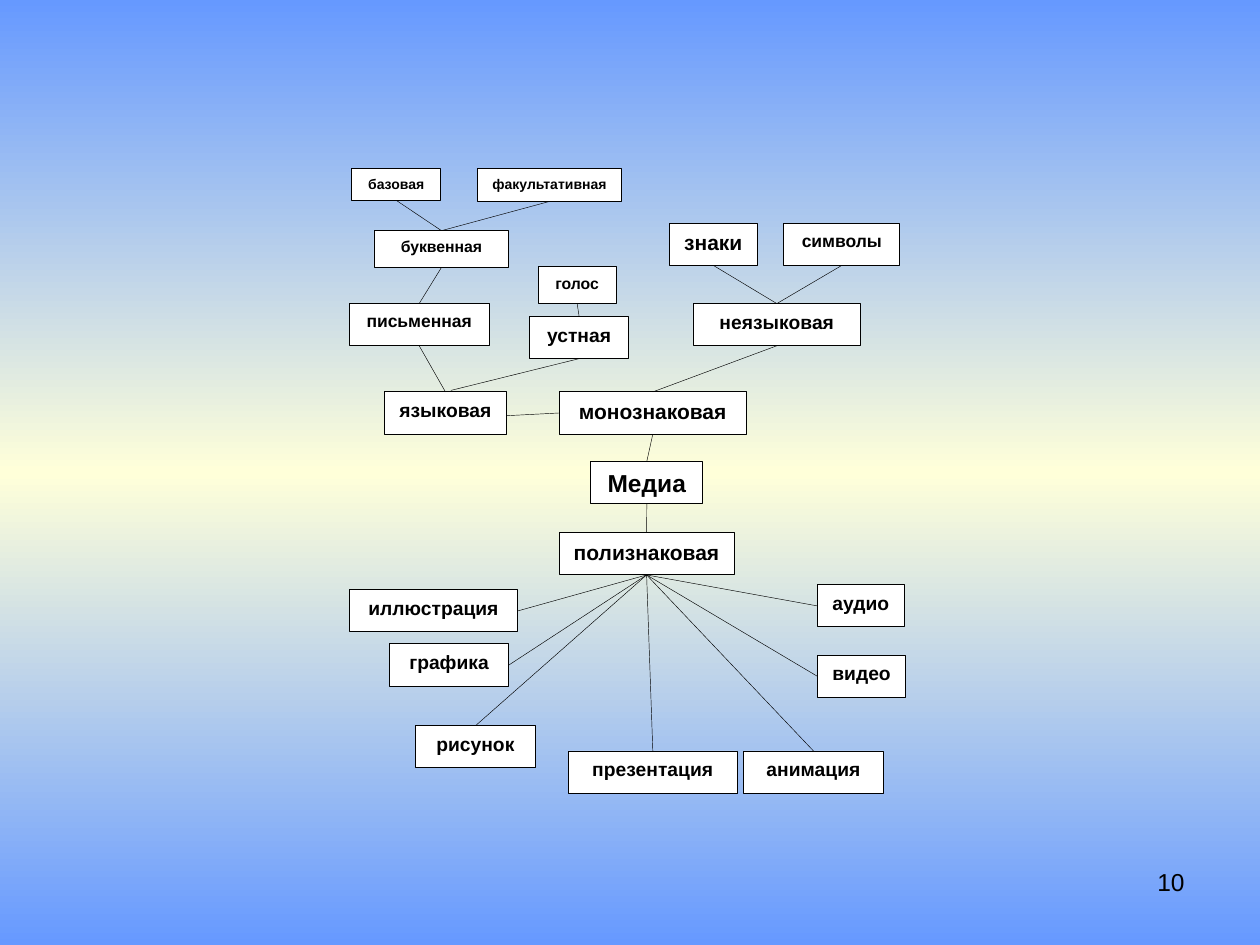
from copy import deepcopy
from typing import NamedTuple, Optional

from pptx import Presentation
from pptx import util as u
from pptx.dml.color import RGBColor
from pptx.enum import shapes, text
from pptx.oxml import ns, xmlchemy

BLACK, WHITE = "000000", "FFFFFF"
BACKGROUND_STOPS = [(0, "6699FF"), (0.5, "FFFFD9"), (1, "6699FF")]
TOP, LEFT, BOTTOM, RIGHT = range(4)


class Node(NamedTuple):
    label: str
    left: float
    top: float
    width: float
    size: int
    height: float = 0.85


class Link(NamedTuple):
    """A line between two boxes; free_end replaces the joint at the target."""
    source: str
    source_side: int
    target: str = ""
    target_side: int = TOP
    free_end: Optional[tuple[float, float]] = None


NODES = [
    Node("базовая", 7.09, 3.4, 1.8, 8, 0.64),
    Node("факультативная", 9.63, 3.4, 2.9, 8, 0.66),
    Node("буквенная", 7.54, 4.65, 2.72, 9, 0.74),
    Node("письменная", 7.04, 6.12, 2.82, 10),
    Node("голос", 10.85, 5.38, 1.57, 9, 0.74),
    Node("устная", 10.67, 6.38, 2.01, 11),
    Node("знаки", 13.49, 4.5, 1.78, 12),
    Node("символы", 15.8, 4.5, 2.34, 10),
    Node("неязыковая", 13.97, 6.12, 3.38, 11),
    Node("языковая", 7.75, 7.9, 2.46, 11),
    Node("монознаковая", 11.28, 7.9, 3.76, 12),
    Node("Медиа", 11.91, 9.3, 2.26, 14),
    Node("полизнаковая", 11.27, 10.74, 3.53, 12),
    Node("иллюстрация", 7.04, 11.89, 3.4, 11),
    Node("графика", 7.85, 12.98, 2.41, 11),
    Node("рисунок", 8.38, 14.63, 2.41, 11),
    Node("презентация", 11.46, 15.14, 3.4, 11),
    Node("анимация", 14.99, 15.14, 2.82, 11),
    Node("видео", 16.48, 13.21, 1.78, 11),
    Node("аудио", 16.48, 11.79, 1.75, 11),
]
DOWNWARD = [
    ("базовая", "буквенная"),
    ("факультативная", "буквенная"),
    ("буквенная", "письменная"),
    ("письменная", "языковая"),
    ("голос", "устная"),
    ("знаки", "неязыковая"),
    ("символы", "неязыковая"),
    ("неязыковая", "монознаковая"),
    ("монознаковая", "Медиа"),
    ("Медиа", "полизнаковая"),
]
POLY_SIDES = {
    "иллюстрация": RIGHT, "графика": RIGHT, "рисунок": TOP, "презентация": TOP,
    "анимация": TOP, "видео": LEFT, "аудио": LEFT,
}
LINKS = [
    *(Link(upper, BOTTOM, lower) for upper, lower in DOWNWARD),
    *(Link("полизнаковая", BOTTOM, label, side) for label, side in POLY_SIDES.items()),
    Link("монознаковая", LEFT, free_end=(10.21, 8.38)),
    Link("устная", BOTTOM, free_end=(9.09, 7.87)),
]


def color(value: str) -> RGBColor:
    return RGBColor.from_string(value)


def apply(target, values: dict) -> None:
    for name, value in values.items():
        setattr(target, name, value)


def paint_background(slide) -> None:
    fill = slide.background.fill
    fill.gradient()
    fill.gradient_angle = 270
    stop_list = slide.element.find(".//" + ns.qn("a:gsLst"))
    stop_list.append(deepcopy(stop_list[-1]))
    for stop, (position, value) in zip(fill.gradient_stops, BACKGROUND_STOPS):
        stop.position = position
        stop.color.rgb = color(value)


def write(shape, label: str, size: int, alignment, bold: bool, side_margin: float) -> None:
    frame = shape.text_frame
    apply(frame, {
        "word_wrap": True, "vertical_anchor": text.MSO_ANCHOR.TOP,
        "margin_left": u.Cm(side_margin), "margin_right": u.Cm(side_margin),
        "margin_top": u.Cm(0.13), "margin_bottom": u.Cm(0.13),
    })
    paragraph = frame.paragraphs[0]
    paragraph.alignment = alignment
    run = paragraph.add_run()
    run.text = label
    apply(run.font, {"name": "Arial", "size": u.Pt(size), "bold": bold})
    run.font.color.rgb = color(BLACK)


def style_line(line, width: float) -> None:
    line.color.rgb = color(BLACK)
    line.width = u.Pt(width)


def draw_node(slide, node: Node):
    shape = slide.shapes.add_shape(
        shapes.MSO_SHAPE.RECTANGLE,
        u.Cm(node.left), u.Cm(node.top), u.Cm(node.width), u.Cm(node.height))
    shape.shadow.inherit = False
    shape.fill.solid()
    shape.fill.fore_color.rgb = color(WHITE)
    style_line(shape.line, 0.5)
    write(shape, node.label, node.size, text.PP_ALIGN.CENTER, True, 0.1)
    return shape


def draw_link(slide, link: Link, boxes: dict) -> None:
    end_x, end_y = link.free_end or (0, 0)
    connector = slide.shapes.add_connector(
        shapes.MSO_CONNECTOR.STRAIGHT, 0, 0, u.Cm(end_x), u.Cm(end_y))
    connector.begin_connect(boxes[link.source], link.source_side)
    if link.free_end is None:
        connector.end_connect(boxes[link.target], link.target_side)
    style_line(connector.line, 0.25)
    connector.element.spPr.append(xmlchemy.OxmlElement("a:effectLst"))


def main() -> None:
    presentation = Presentation()
    apply(presentation, {"slide_width": u.Cm(25.4), "slide_height": u.Cm(19.05)})
    slide = presentation.slides.add_slide(presentation.slide_layouts[6])
    paint_background(slide)
    boxes = {node.label: draw_node(slide, node) for node in NODES}
    for link in LINKS:
        draw_link(slide, link, boxes)
    page_number = slide.shapes.add_textbox(
        u.Cm(18.2), u.Cm(17.35), u.Cm(5.93), u.Cm(1.32))
    write(page_number, "10", 14, text.PP_ALIGN.RIGHT, False, 0.25)
    presentation.save("out.pptx")


if __name__ == "__main__":
    main()
